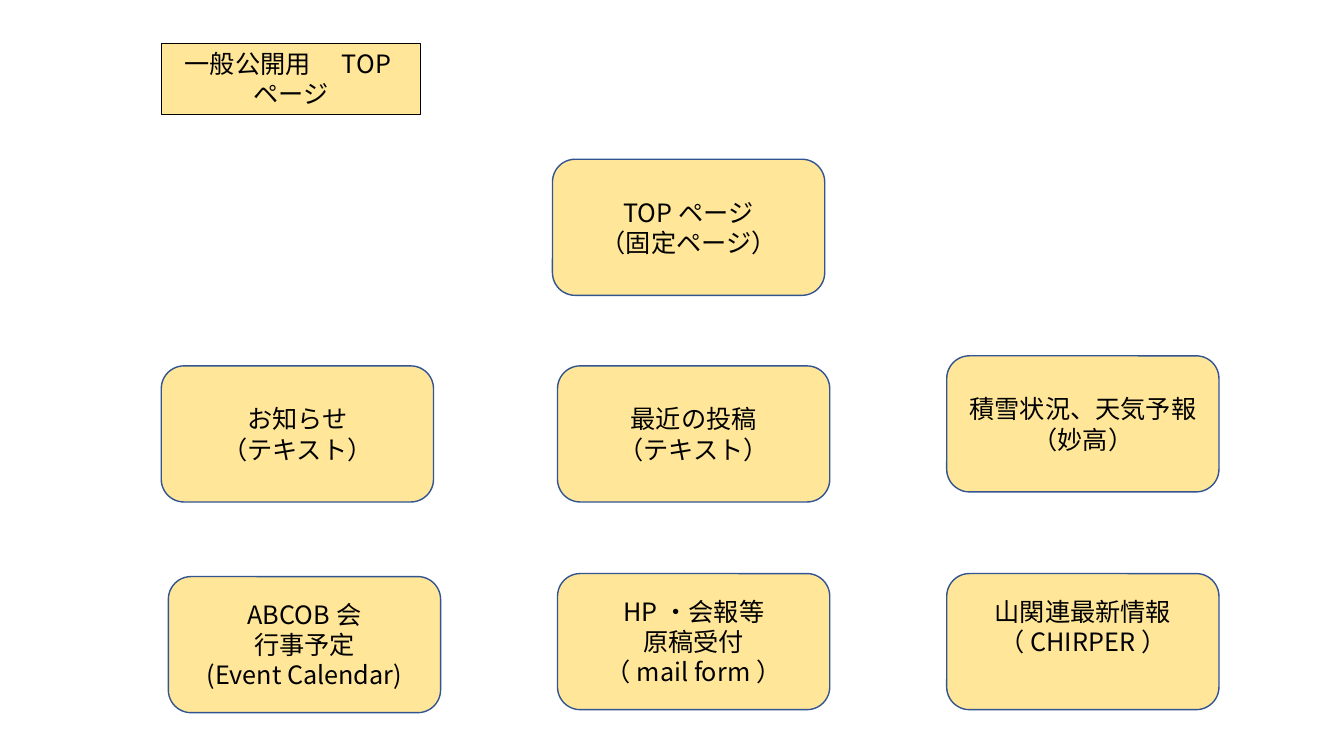
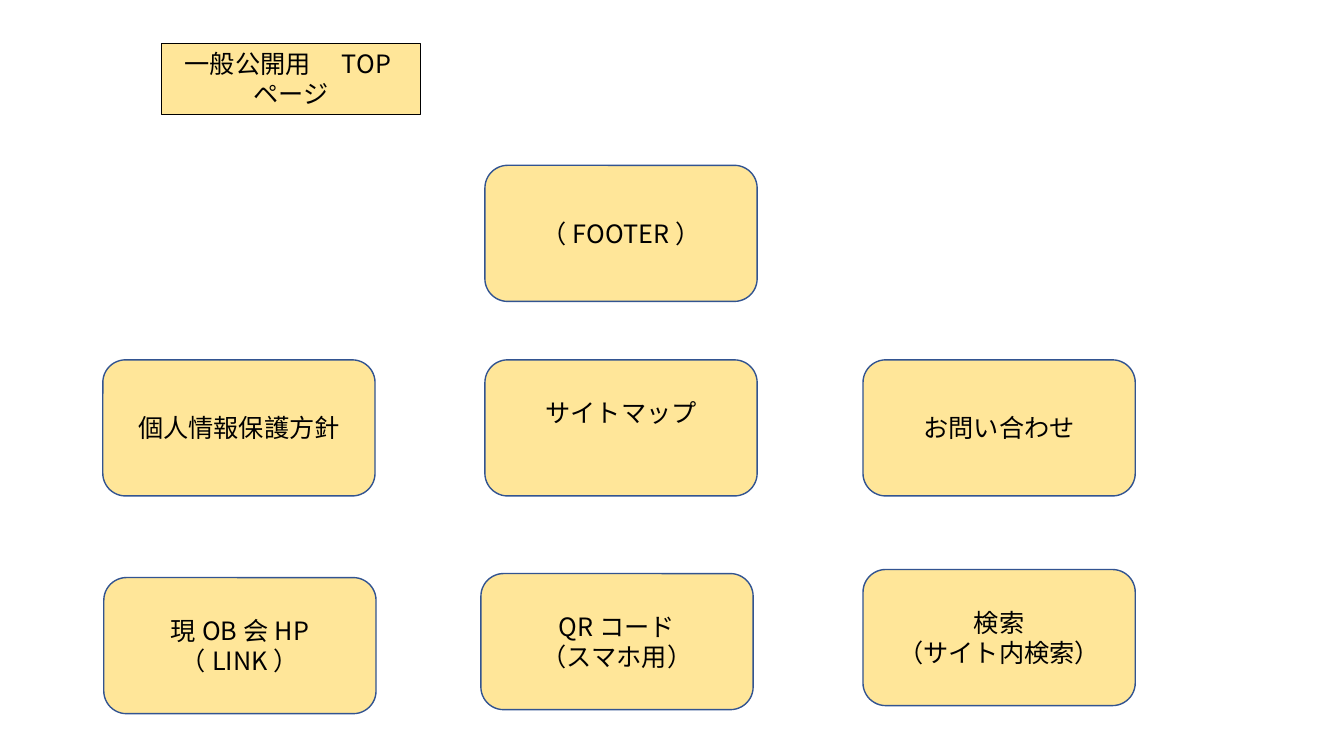
"""Builds two site-map slides for the public top page."""
from lxml import etree
from pptx import Presentation
from pptx.dml.color import RGBColor
from pptx.enum import shapes, text
from pptx.oxml.ns import qn
from pptx.util import Emu, Pt

PX = 9144
FONT = "Noto Sans CJK JP"
SAND, NAVY, BLACK = "FFE699", "325491", "000000"
BOX_SIZE = (270, 135)
BANNER = (160, 43, 257, 71)
BANNER_TEXT = "一般公開用　TOPページ"
RAISED = 35
INSET = 5

PAGES = [
    [
        (548, 158, ["TOPページ", "（固定ページ）"], INSET),
        (160, 363, ["お知らせ", "（テキスト）"], INSET),
        (553, 363, ["最近の投稿", "（テキスト）"], INSET),
        (939, 353, ["積雪状況、天気予報", "（妙高）"], INSET),
        (167, 572, ["ABCOB会", "行事予定", "(Event Calendar)"], INSET),
        (553, 569, ["HP・会報等", "原稿受付", "（mail form）"], INSET),
        (939, 569, ["山関連最新情報", "（CHIRPER）"], RAISED),
    ],
    [
        (481, 164, ["（FOOTER）"], INSET),
        (102, 357, ["個人情報保護方針"], INSET),
        (481, 357, ["サイトマップ"], RAISED),
        (856, 357, ["お問い合わせ"], INSET),
        (103, 573, ["現OB会HP", "（LINK）"], INSET),
        (477, 569, ["QRコード", "（スマホ用）"], INSET),
        (856, 565, ["検索", "（サイト内検索）"], INSET),
    ],
]


def px(length):
    return Emu(length * PX)


def color(hex_code):
    return RGBColor.from_string(hex_code)


def paint(shape, outline, width):
    shape.fill.solid()
    shape.fill.fore_color.rgb = color(SAND)
    shape.line.color.rgb = color(outline)
    shape.line.width = Pt(width)


def write(shape, lines, anchor, bottom):
    frame = shape.text_frame
    settings = {
        "word_wrap": True,
        "auto_size": text.MSO_AUTO_SIZE.NONE,
        "vertical_anchor": anchor,
        "margin_left": px(10),
        "margin_right": px(10),
        "margin_top": px(INSET),
        "margin_bottom": px(bottom),
    }
    for name, value in settings.items():
        setattr(frame, name, value)
    frame.text = "\n".join(lines)
    for paragraph in frame.paragraphs:
        paragraph.alignment = text.PP_ALIGN.CENTER
        for run in paragraph.runs:
            run.font.size = Pt(18)
            run.font.name = FONT
            run.font.color.rgb = color(BLACK)
            east_asian = etree.SubElement(run.font._element, qn("a:ea"))
            east_asian.set("typeface", FONT)


def add_banner(slide):
    banner = slide.shapes.title
    for side, length in zip(("left", "top", "width", "height"), BANNER):
        setattr(banner, side, px(length))
    paint(banner, BLACK, 0.75)
    write(banner, [BANNER_TEXT], text.MSO_ANCHOR.TOP, INSET)


def add_box(slide, left, top, lines, bottom):
    box = slide.shapes.add_shape(
        shapes.MSO_SHAPE.ROUNDED_RECTANGLE,
        *map(px, (left, top, *BOX_SIZE)))
    box.shadow.inherit = False
    paint(box, NAVY, 1)
    write(box, lines, text.MSO_ANCHOR.MIDDLE, bottom)


def main():
    deck = Presentation()
    deck.slide_width, deck.slide_height = px(1333), px(750)
    for boxes in PAGES:
        slide = deck.slides.add_slide(deck.slide_layouts[5])
        add_banner(slide)
        for box in boxes:
            add_box(slide, *box)
    deck.save("out.pptx")


if __name__ == "__main__":
    main()
